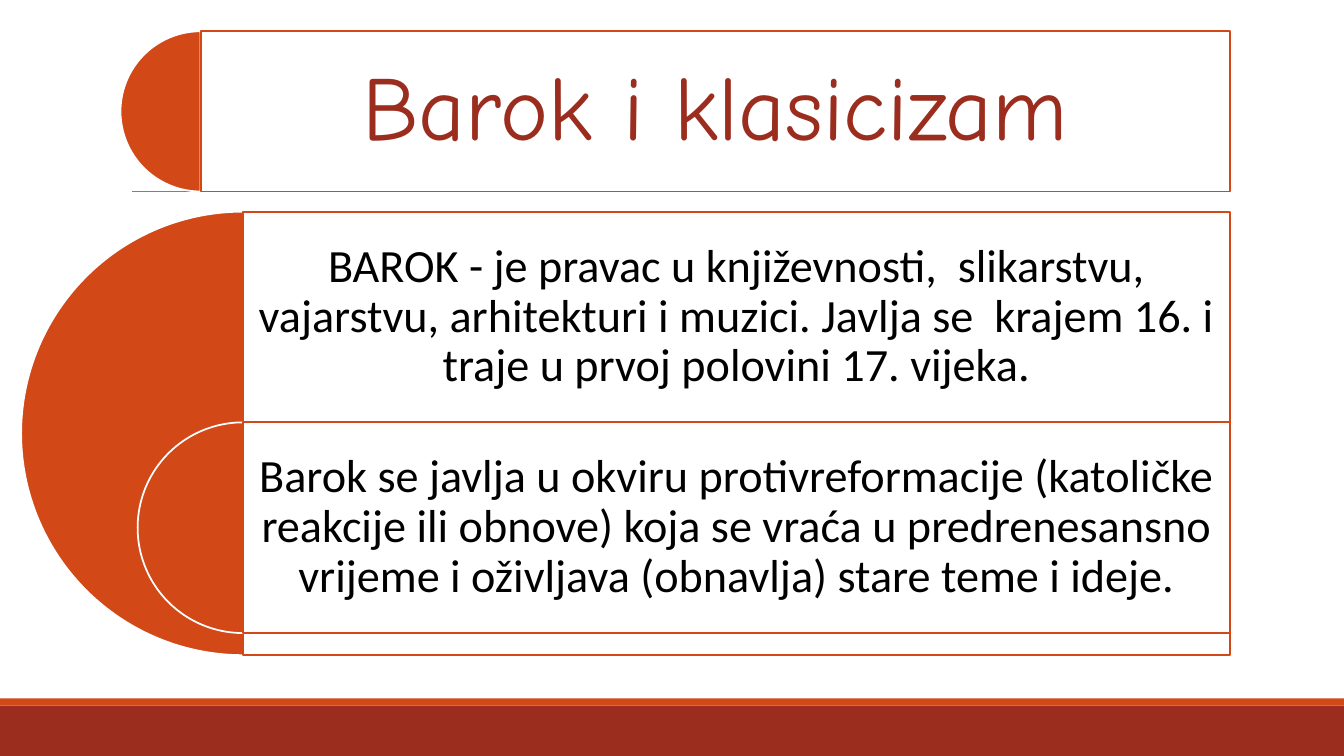
from pptx import Presentation
from pptx.dml.color import RGBColor
from pptx.enum.shapes import MSO_CONNECTOR, MSO_SHAPE
from pptx.enum.text import MSO_ANCHOR, PP_ALIGN
from pptx.oxml import parse_xml
from pptx.oxml.ns import nsdecls, qn
from pptx.util import Inches, Pt

ORANGE = RGBColor(0xD3, 0x48, 0x17)
BRICK = RGBColor(0x9B, 0x2D, 0x1F)
GREY = RGBColor(0x80, 0x80, 0x80)
WHITE = RGBColor(0xFF, 0xFF, 0xFF)
BLACK = RGBColor(0, 0, 0)

PAGE_WIDTH, PAGE_HEIGHT = 13.33, 7.5
RIGHT_EDGE = 12.2
BODY_LEFT, BODY_TOP, BODY_HEIGHT = 2.41, 2.1, 4.4
ROW_HEIGHT = 2.09

BAROQUE = ("BAROK - je pravac u književnosti,  slikarstvu, vajarstvu, arhitekturi "
           "i muzici. Javlja se  krajem 16. i traje u prvoj polovini 17. vijeka.")
COUNTER_REFORMATION = ("Barok se javlja u okviru protivreformacije (katoličke reakcije "
                       "ili obnove) koja se vraća u predrenesansno vrijeme i oživljava "
                       "(obnavlja) stare teme i ideje.")


def add_filled(page, kind, left, top, width, height, fill, line=None):
    shape = page.shapes.add_shape(kind, Inches(left), Inches(top),
                                  Inches(width), Inches(height))
    shape.shadow.inherit = False
    shape.fill.solid()
    shape.fill.fore_color.rgb = fill
    if line is None:
        shape.line.fill.background()
    else:
        shape.line.color.rgb = line
        shape.line.width = Pt(1.25)
    return shape


def add_footer(page, top):
    """Draw the brick band with its thin orange strip above."""
    strip = 0.07
    add_filled(page, MSO_SHAPE.RECTANGLE, 0, top + strip, PAGE_WIDTH,
               PAGE_HEIGHT - top - strip, BRICK)
    add_filled(page, MSO_SHAPE.RECTANGLE, 0, top, PAGE_WIDTH, strip, ORANGE)


def add_title_rule(page, left, right, top):
    rule = page.shapes.add_connector(MSO_CONNECTOR.STRAIGHT, Inches(left), Inches(top),
                                     Inches(right), Inches(top))
    rule.line.color.rgb = GREY
    rule.line.width = Pt(0.5)
    rule._element.spPr.append(parse_xml(f"<a:effectLst {nsdecls('a')}/>"))


def add_target_row(page, left, top, height):
    """Draw a half disc whose flat side meets a framed, nearly opaque panel."""
    disc = add_filled(page, MSO_SHAPE.PIE, left - height / 2, top, height, height,
                      ORANGE, WHITE)
    disc.adjustments[0], disc.adjustments[1] = 54, 162
    panel = add_filled(page, MSO_SHAPE.RECTANGLE, left, top, RIGHT_EDGE - left, height,
                       WHITE, ORANGE)
    colour = panel._element.spPr.find(qn("a:solidFill"))[0]
    colour.append(parse_xml(f'<a:alpha {nsdecls("a")} val="90000"/>'))


def add_row_text(page, left, top, height, text, size, font, colour, inset):
    box = page.shapes.add_textbox(Inches(left), Inches(top),
                                  Inches(RIGHT_EDGE - left), Inches(height))
    frame = box.text_frame
    frame.word_wrap = True
    frame.vertical_anchor = MSO_ANCHOR.MIDDLE
    frame.margin_left = frame.margin_right = Inches(inset)
    frame.margin_top = frame.margin_bottom = Inches(inset)
    para = frame.paragraphs[0]
    para.alignment = PP_ALIGN.CENTER
    para.line_spacing = 0.9
    span = para.add_run()
    span.text = text
    span.font.size = Pt(size)
    span.font.name = font
    span.font.color.rgb = colour


def add_title(page, left, top, height):
    add_title_rule(page, 1.31, RIGHT_EDGE, top + height)
    add_target_row(page, left, top, height)
    add_row_text(page, left, top, height, "Barok i klasicizam", 65, "Comic Neue", BRICK, 0.27)


def add_body(page, left, top, height):
    """Nest each row's half disc in the one before and stack the texts."""
    for index, text in enumerate((BAROQUE, COUNTER_REFORMATION)):
        row_top = top + index * ROW_HEIGHT
        add_target_row(page, left, row_top, ROW_HEIGHT if index else height)
        add_row_text(page, left, row_top, ROW_HEIGHT, text, 33, "Calibri", BLACK, 0.14)


def main():
    deck = Presentation()
    deck.slide_width, deck.slide_height = Inches(PAGE_WIDTH), Inches(PAGE_HEIGHT)
    page = deck.slides.add_slide(deck.slide_layouts[6])
    add_footer(page, 6.93)
    add_title(page, 1.99, 0.31, 1.59)
    add_body(page, BODY_LEFT, BODY_TOP, BODY_HEIGHT)
    deck.save("out.pptx")


if __name__ == "__main__":
    main()
